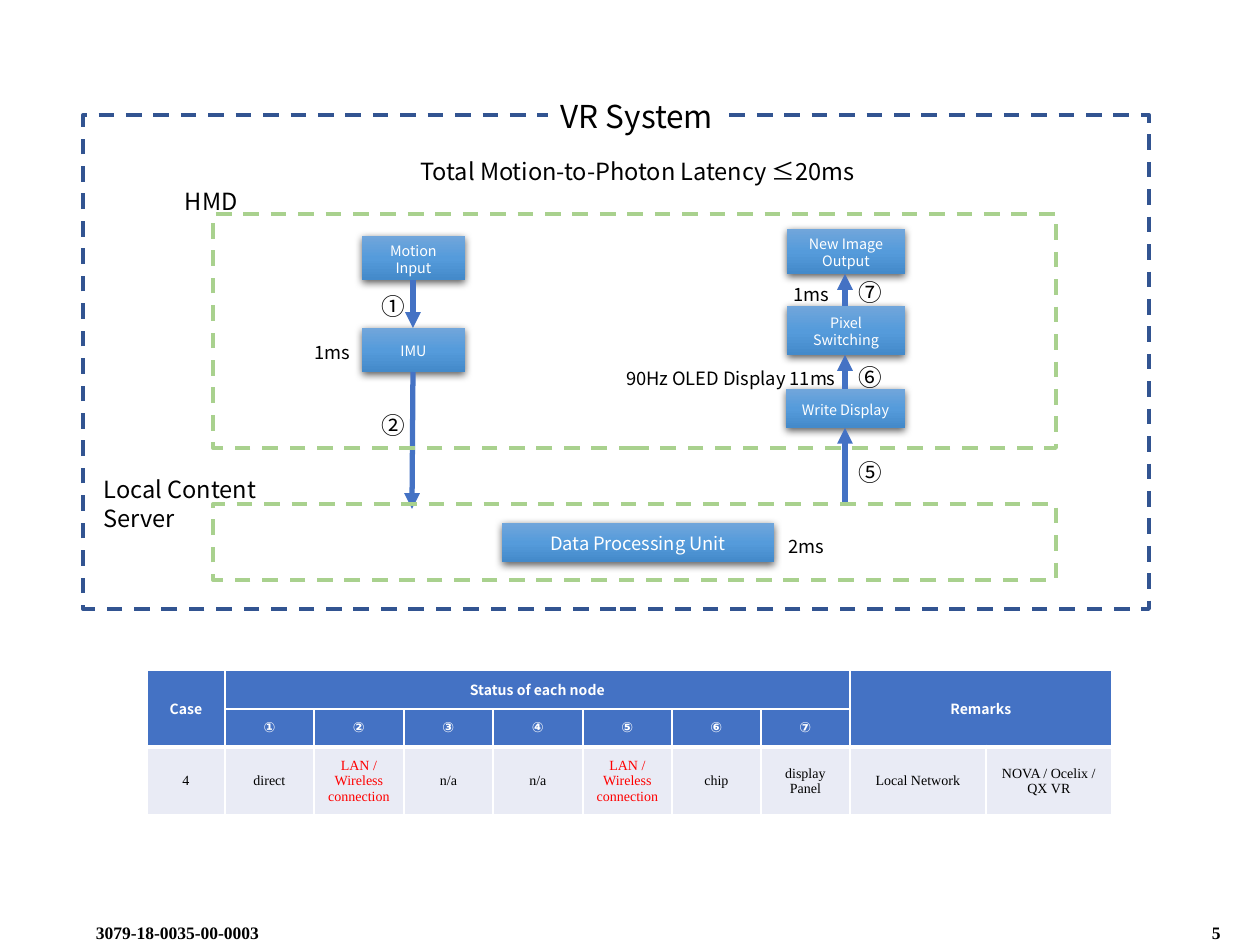
import lxml.etree
import pptx
import pptx.dml.color
import pptx.enum.dml
import pptx.enum.shapes
import pptx.enum.text
import pptx.oxml
import pptx.oxml.ns
import pptx.util

RGBColor = pptx.dml.color.RGBColor
BLACK = RGBColor(0x00, 0x00, 0x00)
WHITE = RGBColor(0xFF, 0xFF, 0xFF)
RED = RGBColor(0xFF, 0x00, 0x00)
BLUE = RGBColor(0x44, 0x72, 0xC4)
NAVY = RGBColor(0x32, 0x54, 0x91)
GREEN = RGBColor(0xA9, 0xD1, 0x8E)
PALE = RGBColor(0xE9, 0xEB, 0xF5)
NODE_STOPS = [
    (0, RGBColor(0x71, 0xA6, 0xDB)),
    (50, RGBColor(0x55, 0x9B, 0xDB)),
    (100, RGBColor(0x44, 0x8A, 0xCA)),
]

SANS = "Noto Sans CJK KR"
SERIF = "Times New Roman"
SYMBOL = "DejaVu Sans"
LEFT = pptx.enum.text.PP_ALIGN.LEFT
CENTER = pptx.enum.text.PP_ALIGN.CENTER
TOP = pptx.enum.text.MSO_ANCHOR.TOP
MIDDLE = pptx.enum.text.MSO_ANCHOR.MIDDLE
RECTANGLE = pptx.enum.shapes.MSO_SHAPE.RECTANGLE
STRAIGHT = pptx.enum.shapes.MSO_CONNECTOR.STRAIGHT
DASH = pptx.enum.dml.MSO_LINE.DASH
NAMESPACE = pptx.oxml.ns.nsdecls("a")
QN = pptx.oxml.ns.qn


def px(*lengths):
    return [pptx.util.Emu(round(length * 914400 / 126)) for length in lengths]


def set_values(target, values):
    for name, value in values.items():
        setattr(target, name, value)


class SlideBuilder:
    def __init__(self, slide):
        self.slide = slide
        self.shapes = slide.shapes

    def fill_text(self, frame, text, size, color=BLACK, font=SANS, bold=False,
                  align=LEFT, spacing=1.2):
        """Fill a text frame; a newline starts a paragraph, a vertical tab a line."""
        frame.text = text
        for paragraph in frame.paragraphs:
            paragraph.alignment = align
            if spacing:
                paragraph.line_spacing = pptx.util.Pt(round(size * spacing, 1))
            for run in paragraph.runs:
                set_values(run.font, {"name": font, "size": pptx.util.Pt(size), "bold": bold})
                run.font.color.rgb = color
                east_asian = lxml.etree.SubElement(run.font._element, QN("a:ea"))
                east_asian.set("typeface", font)

    def set_frame(self, frame, wrap=True, anchor=TOP, insets=(12, 8, 12, 4)):
        left, top, right, bottom = px(*insets)
        set_values(frame, {
            "word_wrap": wrap, "vertical_anchor": anchor,
            "auto_size": pptx.enum.text.MSO_AUTO_SIZE.NONE,
            "margin_left": left, "margin_top": top,
            "margin_right": right, "margin_bottom": bottom,
        })

    def title(self, text, left, top, width, height):
        shape = self.shapes.title
        bounds = px(left, top, width, height)
        set_values(shape, dict(zip(("left", "top", "width", "height"), bounds)))
        shape.fill.solid()
        shape.fill.fore_color.rgb = WHITE
        self.set_frame(shape.text_frame, wrap=False)
        self.fill_text(shape.text_frame, text, 18, align=CENTER)
        self.shapes._spTree.append(shape._element)  # in front of the system frame

    def label(self, text, left, top, width, height, size=13.5, wrap=False, **style):
        shape = self.shapes.add_textbox(*px(left, top, width, height))
        self.set_frame(shape.text_frame, wrap)
        self.fill_text(shape.text_frame, text, size, **style)

    def zone(self, color, left, top, width, height):
        shape = self.shapes.add_shape(RECTANGLE, *px(left, top, width, height))
        shape.shadow.inherit = False
        shape.fill.background()
        shape.line.color.rgb = color
        set_values(shape.line, {"width": pptx.util.Pt(2.25), "dash_style": DASH})

    def node(self, text, left, top, width, height, size=8.2):
        """Add a process box with a vertical gradient and a soft shadow."""
        shape = self.shapes.add_shape(RECTANGLE, *px(left, top, width, height))
        shape.line.fill.background()
        shape.shadow.inherit = False
        stops = "".join(
            f'<a:gs pos="{position * 1000}"><a:srgbClr val="{color}"/></a:gs>'
            for position, color in NODE_STOPS)
        properties = shape._element.spPr
        properties.insert(2, pptx.oxml.parse_xml(
            f'<a:gradFill {NAMESPACE} rotWithShape="1"><a:gsLst>{stops}</a:gsLst>'
            '<a:lin ang="5400000" scaled="0"/></a:gradFill>'))
        properties.find(QN("a:effectLst")).append(pptx.oxml.parse_xml(
            f'<a:outerShdw {NAMESPACE} blurRad="57150" dist="19050" dir="5400000" '
            'algn="ctr" rotWithShape="0"><a:srgbClr val="000000">'
            '<a:alpha val="63000"/></a:srgbClr></a:outerShdw>'))
        self.set_frame(shape.text_frame, anchor=MIDDLE, insets=(8, 6, 8, 4))
        self.fill_text(shape.text_frame, text, size, color=WHITE, align=CENTER)

    def arrow(self, *ends):
        connector = self.shapes.add_connector(STRAIGHT, *px(*ends))
        connector.line.color.rgb = BLUE
        connector.line.width = pptx.util.Pt(3)
        lxml.etree.SubElement(connector.line._get_or_add_ln(), QN("a:tailEnd")).set(
            "type", "triangle")
        lxml.etree.SubElement(connector._element.spPr, QN("a:effectLst"))

    def cell_borders(self, cell, **widths):
        properties = cell._tc.get_or_add_tcPr()
        for side in "LRTB":
            properties.append(pptx.oxml.parse_xml(
                f'<a:ln{side} {NAMESPACE} w="{widths.get(side, 1) * 12700}">'
                f'<a:solidFill><a:srgbClr val="{WHITE}"/></a:solidFill></a:ln{side}>'))

    def table(self, left, top, columns, rows, contents, merges):
        table = self.shapes.add_table(
            len(rows), len(columns), *px(left, top, sum(columns), sum(rows))).table
        for column, width in zip(table.columns, px(*columns)):
            column.width = width
        for row, height in zip(table.rows, px(*rows)):
            row.height = height
        for first, last in merges:
            table.cell(*first).merge(table.cell(*last))
        for row, texts in enumerate(contents):
            for column, text in enumerate(texts):
                cell = table.cell(row, column)
                header = row < 2
                if header:
                    bottom = row + max(cell.span_height, 1) == 2
                    self.cell_borders(cell, B=3 if bottom else 1)
                else:
                    self.cell_borders(cell, T=3)
                cell.fill.solid()
                cell.fill.fore_color.rgb = BLUE if header else PALE
                horizontal, vertical = px(*((6, 1) if row == 2 and column > 7 else (9, 5)))
                set_values(cell, {
                    "vertical_anchor": MIDDLE,
                    "margin_left": horizontal, "margin_right": horizontal,
                    "margin_top": vertical, "margin_bottom": vertical,
                })
                if not text:
                    continue
                font = (SANS, SYMBOL, SERIF)[row]
                color = WHITE if header else RED if text.startswith("LAN") else BLACK
                self.fill_text(cell.text_frame, text, 8, color=color, font=font,
                               bold=header, align=CENTER, spacing=None)


def main():
    presentation = pptx.Presentation()
    presentation.slide_width, presentation.slide_height = px(1260, 945)
    builder = SlideBuilder(presentation.slides.add_slide(presentation.slide_layouts[5]))

    for text, left, width in [("3079-18-0035-00-0003", 84, 662), ("5", 1200, 60)]:
        builder.label(text, left, 914, width, 31, size=10, font=SERIF, bold=True)

    for node in [
        ("Motion\nInput", 362, 236, 103, 44),
        ("IMU", 362, 328, 103, 44),
        ("Data Processing Unit", 502, 523, 272, 39, 10.5),
        ("Write Display", 786, 389, 119, 39),
        ("Pixel\nSwitching", 787, 306, 118, 49),
        ("New Image\nOutput", 787, 229, 118, 45),
    ]:
        builder.node(*node)

    for ends in [(413, 280, 413, 328), (413, 372, 412, 509), (845, 504, 845, 428),
                 (845, 389, 845, 355), (845, 306, 845, 274)]:
        builder.arrow(*ends)

    builder.zone(GREEN, 213, 504, 843, 76)
    builder.zone(GREEN, 213, 214, 843, 234)
    builder.zone(NAVY, 83, 115, 1066, 494)
    builder.title("VR System", 548, 89, 178, 50)

    builder.label("HMD", 173, 179, 82, 42)
    builder.label("Total Motion-to-Photon Latency ≤20ms", 354, 149, 567, 42,
                  wrap=True, align=CENTER)
    builder.label("Local Content\vServer", 92, 467, 252, 42)
    for number, left, top in [("①", 370, 284), ("②", 370, 403), ("⑤", 847, 450),
                              ("⑥", 847, 355), ("⑦", 847, 270)]:
        builder.label(number, left, top, 49, 42)
    for text, left, top, width in [
        ("1ms", 765, 275, 92), ("90Hz OLED Display 11ms", 612, 359, 238),
        ("1ms", 286, 333, 92), ("2ms", 773, 527, 66),
    ]:
        builder.label(text, left, top, width, 35, size=10.5, align=CENTER)

    wireless = "LAN /\nWireless connection"
    builder.table(
        147, 670, [78, 89, 90, 89, 90, 89, 89, 89, 136, 126], [39, 38, 68],
        [
            ["Case", "Status of each node", *[""] * 6, "Remarks", ""],
            ["", *"①②③④⑤⑥⑦", "", ""],
            ["4", "direct", wireless, "n/a", "n/a", wireless, "chip", "display\nPanel",
             "Local Network", "NOVA / Ocelix /\nQX VR"],
        ],
        [((0, 0), (1, 0)), ((0, 1), (0, 7)), ((0, 8), (1, 9))])

    presentation.save("out.pptx")


if __name__ == "__main__":
    main()
